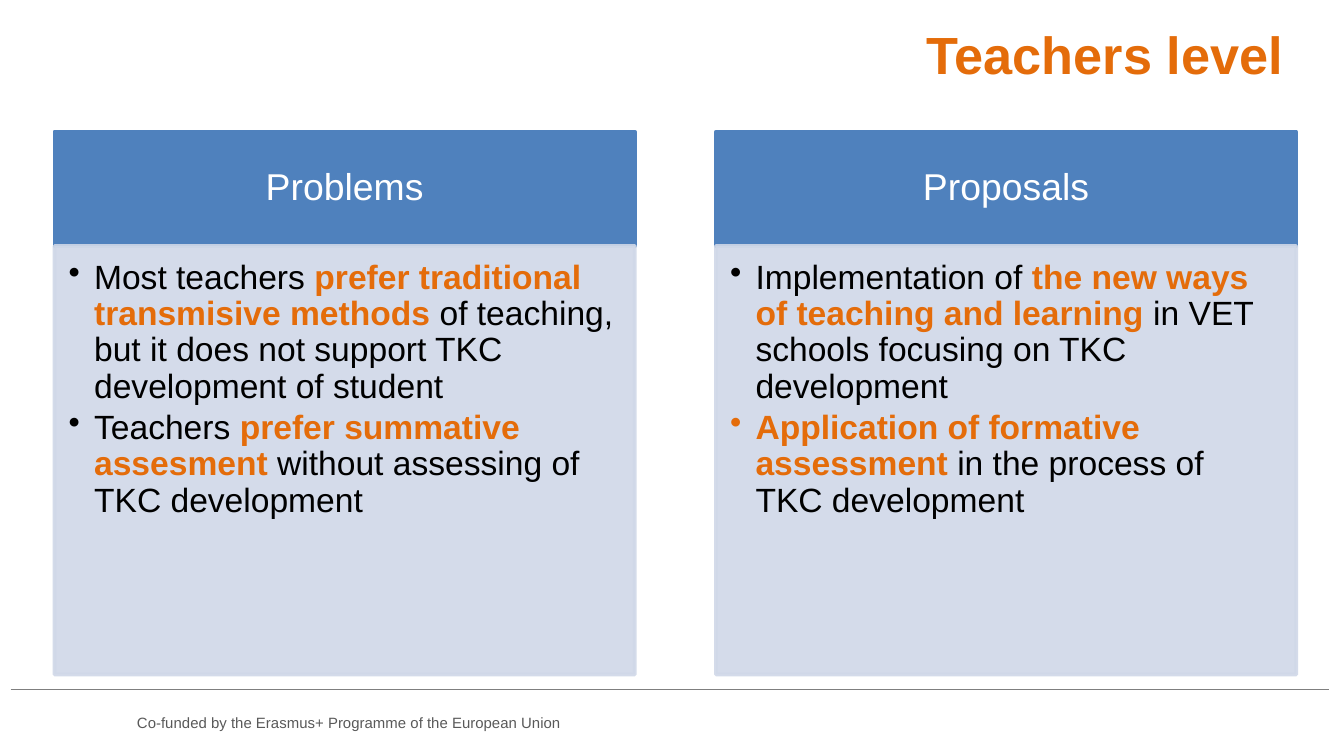
import pptx
import pptx.util
import pptx.dml.color
import pptx.enum.shapes
import pptx.enum.text
import pptx.oxml.ns
from lxml import etree

Cm = pptx.util.Cm
Pt = pptx.util.Pt
RGBColor = pptx.dml.color.RGBColor
ALIGN = pptx.enum.text.PP_ALIGN
ANCHOR = pptx.enum.text.MSO_ANCHOR
qn = pptx.oxml.ns.qn

ORANGE = RGBColor(0xE4, 0x6C, 0x0A)
BLUE = RGBColor(0x4F, 0x81, 0xBD)
PALE_BLUE = RGBColor(0xD0, 0xD8, 0xE8)
GRAY = RGBColor(0x7F, 0x7F, 0x7F)
DARK_GRAY = RGBColor(0x59, 0x59, 0x59)
BLACK = RGBColor(0, 0, 0)
WHITE = RGBColor(0xFF, 0xFF, 0xFF)

TITLE = "Teachers level"
FOOTER = "Co-funded by the Erasmus+ Programme of the European Union"
COLUMNS = [
    ("Problems", [
        [("Most teachers ", False),
         ("prefer traditional transmisive methods ", True),
         ("of teaching, but it does not support TKC development of student", False)],
        [("Teachers ", False),
         ("prefer summative assesment ", True),
         ("without assessing of TKC development", False)],
    ]),
    ("Proposals", [
        [("Implementation of ", False),
         ("the new ways of teaching and learning ", True),
         ("in VET schools focusing on TKC development", False)],
        [("Application of formative assessment", True),
         (" in the process of TKC development", False)],
    ]),
]

COLUMN_LEFT, COLUMN_STEP, COLUMN_WIDTH = 1.03, 12.5, 10.97
HEADER_TOP, HEADER_HEIGHT, BODY_HEIGHT = 2.49, 2.16, 8.1


def add_run(paragraph, text, size, color, bold=False):
    run = paragraph.add_run()
    run.text = text
    run.font.name = "Arial"
    run.font.size = Pt(size)
    run.font.bold = bold
    run.font.color.rgb = color


def add_label(slide, box, text, size, color, bold=False, align=ALIGN.LEFT):
    label = slide.shapes.add_textbox(*map(Cm, box)).text_frame
    label.word_wrap = True
    paragraph = label.paragraphs[0]
    paragraph.alignment = align
    add_run(paragraph, text, size, color, bold)


def add_panel(slide, box, color, insets, anchor):
    panel = slide.shapes.add_shape(pptx.enum.shapes.MSO_SHAPE.RECTANGLE, *map(Cm, box))
    panel.shadow.inherit = False
    panel.fill.solid()
    panel.fill.fore_color.rgb = color
    panel.line.color.rgb = color
    panel.line.width = Pt(2)
    frame = panel.text_frame
    frame.word_wrap = True
    frame.vertical_anchor = anchor
    (frame.margin_left, frame.margin_top,
     frame.margin_right, frame.margin_bottom) = map(Cm, insets)
    return panel


def set_opacity(panel, percent):
    for color in panel.element.spPr.iter(qn("a:srgbClr")):
        etree.SubElement(color, qn("a:alpha")).set("val", str(percent * 1000))


def add_bullet(paragraph):
    properties = paragraph._p.get_or_add_pPr()
    properties.set("marL", str(Cm(0.48)))
    properties.set("indent", str(-Cm(0.48)))
    etree.SubElement(properties, qn("a:buChar")).set("char", "•")


def add_column(slide, left, heading, points):
    header = add_panel(slide, (left, HEADER_TOP, COLUMN_WIDTH, HEADER_HEIGHT),
                       BLUE, (0.4, 0.23, 0.4, 0.23), ANCHOR.MIDDLE)
    paragraph = header.text_frame.paragraphs[0]
    paragraph.alignment = ALIGN.CENTER
    paragraph.line_spacing = 0.9
    add_run(paragraph, heading, 20, WHITE)

    body = add_panel(slide, (left, HEADER_TOP + HEADER_HEIGHT, COLUMN_WIDTH, BODY_HEIGHT),
                     PALE_BLUE, (0.27, 0.27, 0.36, 0.4), ANCHOR.TOP)
    set_opacity(body, 90)
    for index, point in enumerate(points):
        frame = body.text_frame
        paragraph = frame.add_paragraph() if index else frame.paragraphs[0]
        add_bullet(paragraph)
        paragraph.level = 1
        paragraph.alignment = ALIGN.LEFT
        paragraph.line_spacing = 0.9
        paragraph.space_after = Pt(2.7)
        for text, stressed in point:
            add_run(paragraph, text, 18, ORANGE if stressed else BLACK, stressed)


def main():
    deck = pptx.Presentation()
    deck.slide_width, deck.slide_height = Cm(25.4), Cm(14.29)
    slide = deck.slides.add_slide(deck.slide_layouts[6])

    rule = slide.shapes.add_connector(pptx.enum.shapes.MSO_CONNECTOR.STRAIGHT,
                                      Cm(0.2), Cm(13.03), Cm(25.12), Cm(13.03))
    rule.line.color.rgb = GRAY
    rule.line.width = Pt(0.25)
    etree.SubElement(rule.element.spPr, qn("a:effectLst"))
    add_label(slide, (2.34, 13.36, 11.1, 0.6), FOOTER, 8, DARK_GRAY)

    for index, (heading, points) in enumerate(COLUMNS):
        add_column(slide, COLUMN_LEFT + index * COLUMN_STEP, heading, points)

    add_label(slide, (11.51, 0.3, 12.98, 1.45), TITLE, 28, ORANGE, True, ALIGN.RIGHT)
    deck.save("out.pptx")


if __name__ == "__main__":
    main()
